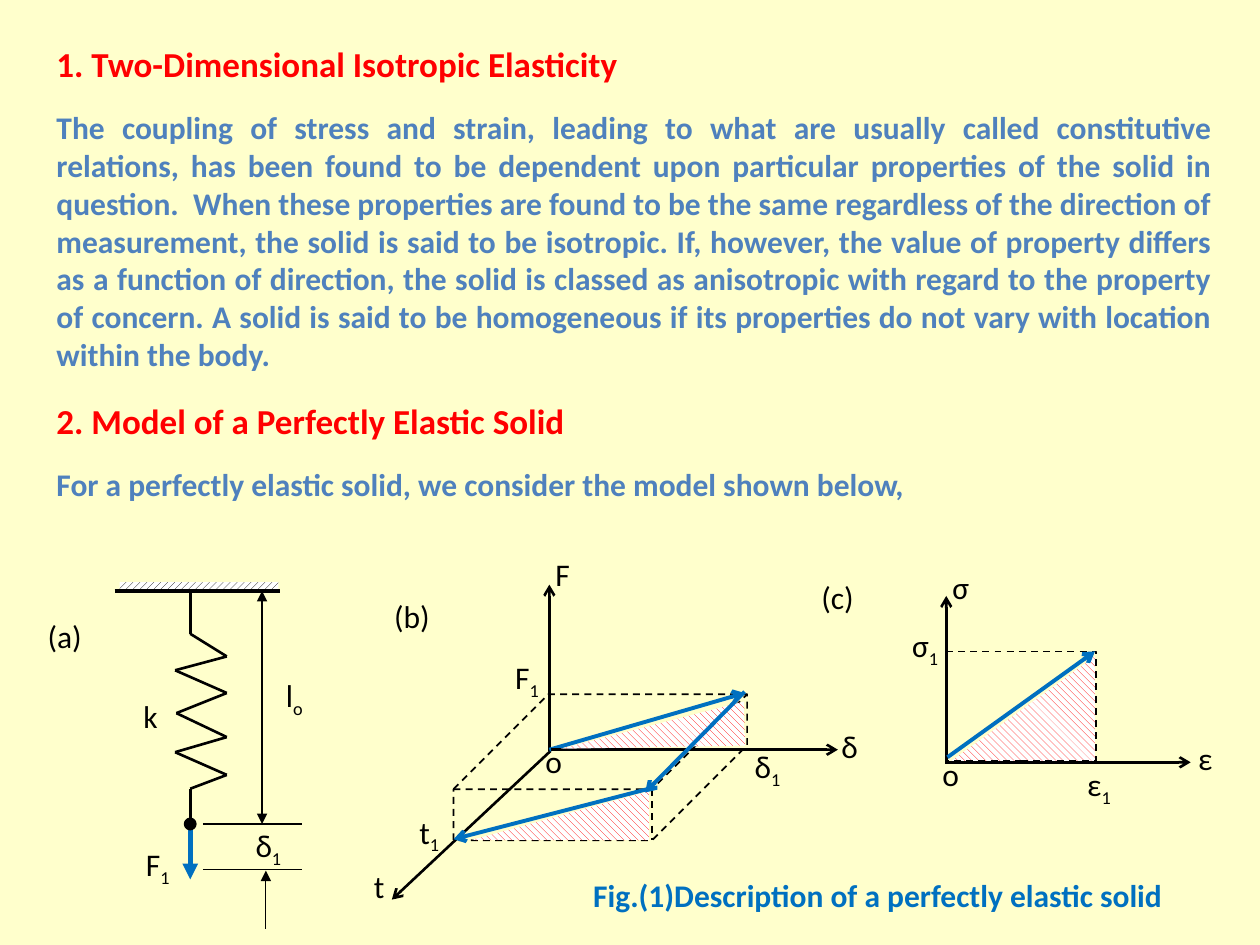
from dataclasses import dataclass
from itertools import pairwise

from pptx import Presentation
from pptx.dml.color import RGBColor
from pptx.enum.dml import MSO_LINE, MSO_PATTERN
from pptx.enum.shapes import MSO_CONNECTOR, MSO_SHAPE
from pptx.enum.text import MSO_AUTO_SIZE, PP_ALIGN
from pptx.oxml.ns import qn
from pptx.util import Inches, Pt
from lxml.etree import SubElement

CREAM = RGBColor(0xFF, 0xFF, 0xCC)
RED = RGBColor(0xFF, 0x00, 0x00)
STEEL = RGBColor(0x4F, 0x81, 0xBD)
BLUE = RGBColor(0x00, 0x70, 0xC0)
BLACK = RGBColor(0x00, 0x00, 0x00)
WHITE = RGBColor(0xFF, 0xFF, 0xFF)

HEADING = {"name": "Calibri", "size": Pt(20), "bold": True}
BODY = {"name": "Calibri", "size": Pt(18), "bold": True}
LABEL = {"name": "Calibri", "size": Pt(18)}


@dataclass
class Line:
    start: tuple[float, float]
    end: tuple[float, float]
    width: float = 1.5
    color: RGBColor = BLACK
    head: str = ""
    tail: str = ""


@dataclass
class Label:
    text: str
    left: float
    top: float
    width: float = 0.39
    height: float = 0.4
    subscript: str = ""


@dataclass
class Hatch:
    left: float
    top: float
    width: float
    height: float
    rotation: float = 0


def force(start: tuple[float, float], end: tuple[float, float]) -> Line:
    return Line(start, end, 2.25, BLUE, tail="arrow")


def axis(tip: tuple[float, float], base: tuple[float, float]) -> Line:
    return Line(tip, base, head="arrow")


def draw_line(slide, line: Line) -> None:
    connector = slide.shapes.add_connector(
        MSO_CONNECTOR.STRAIGHT, *map(Inches, line.start + line.end))
    connector.line.width = Pt(line.width)
    connector.line.color.rgb = line.color
    outline = connector.line._get_or_add_ln()
    for tag, arrow in (("a:headEnd", line.head), ("a:tailEnd", line.tail)):
        if arrow:
            SubElement(outline, qn(tag), type=arrow)
    SubElement(connector._element.spPr, qn("a:effectLst"))


def add_run(paragraph, text: str, color: RGBColor, style: dict):
    run = paragraph.add_run()
    run.text = text
    for name, value in style.items():
        setattr(run.font, name, value)
    run.font.color.rgb = color
    return run


def add_text_frame(slide, left: float, top: float, width: float, height: float):
    frame = slide.shapes.add_textbox(*map(Inches, (left, top, width, height))).text_frame
    frame.word_wrap = True
    frame.auto_size = MSO_AUTO_SIZE.SHAPE_TO_FIT_TEXT
    return frame


def draw_label(slide, label: Label) -> None:
    frame = add_text_frame(slide, label.left, label.top, label.width, label.height)
    paragraph = frame.paragraphs[0]
    add_run(paragraph, label.text, BLACK, LABEL)
    if label.subscript:
        run = add_run(paragraph, label.subscript, BLACK, LABEL)
        run.font._element.set("baseline", "-25000")


def draw_section(slide, top: float, height: float, heading: str, body: str) -> None:
    frame = add_text_frame(slide, 0.35, top, 9.37, height)
    add_run(frame.paragraphs[0], heading, RED, HEADING)
    paragraph = frame.add_paragraph()
    paragraph.alignment = PP_ALIGN.JUSTIFY
    paragraph.space_before = Pt(13.4)
    add_run(paragraph, body, STEEL, BODY)


def add_plain_shape(slide, kind: MSO_SHAPE, left: float, top: float, width: float, height: float):
    """Add a preset shape without shadow, fill or outline."""
    shape = slide.shapes.add_shape(kind, *map(Inches, (left, top, width, height)))
    shape.shadow.inherit = False
    shape.fill.background()
    shape.line.fill.background()
    return shape


def set_pattern(shape, pattern: MSO_PATTERN, color: RGBColor) -> None:
    shape.fill.patterned()
    shape.fill.pattern = pattern
    shape.fill.fore_color.rgb = color
    shape.fill.back_color.rgb = WHITE


def set_dashed(shape) -> None:
    shape.line.color.rgb = BLACK
    shape.line.width = Pt(1)
    shape.line.dash_style = MSO_LINE.DASH


def draw_hatch(slide, hatch: Hatch) -> None:
    triangle = add_plain_shape(slide, MSO_SHAPE.RIGHT_TRIANGLE, hatch.left, hatch.top,
                               hatch.width, hatch.height)
    triangle._element.spPr.xfrm.set("flipH", "1")
    triangle.rotation = hatch.rotation
    set_pattern(triangle, MSO_PATTERN.WIDE_DOWNWARD_DIAGONAL, RED)


def draw_all(slide, items: list) -> None:
    painters = {Line: draw_line, Label: draw_label, Hatch: draw_hatch}
    for item in items:
        painters[type(item)](slide, item)


def draw_spring(slide) -> None:
    draw_line(slide, Line((1.51, 6.49), (1.51, 6.98), 3, BLUE, tail="triangle"))
    ceiling = add_plain_shape(slide, MSO_SHAPE.RECTANGLE, 0.95, 4.62, 1.26, 0.08)
    set_pattern(ceiling, MSO_PATTERN.WIDE_UPWARD_DIAGONAL, BLACK)
    draw_line(slide, Line((0.91, 4.69), (2.22, 4.69), 2.25))
    coil = [(1.51, 4.68), (1.51, 5.03), (1.8, 5.21), (1.39, 5.32), (1.8, 5.5), (1.4, 5.66),
            (1.8, 5.85), (1.39, 5.97), (1.8, 6.15), (1.51, 6.26), (1.51, 6.57)]
    draw_all(slide, [Line(start, end) for start, end in pairwise(coil)])
    joint = add_plain_shape(slide, MSO_SHAPE.OVAL, 1.48, 6.51, 0.06, 0.06)
    joint.fill.solid()
    joint.fill.fore_color.rgb = BLACK
    joint.line.color.rgb = BLACK
    joint.line.width = Pt(3)
    draw_all(slide, [
        *(Line((1.61, y), (2.4, y), 0.75) for y in (6.54, 6.9)),
        Line((2.08, 4.69), (2.08, 6.54), 0.75, head="triangle", tail="triangle"),
        Line((2.11, 6.91), (2.11, 7.37), 0.75, head="triangle"),
        Label("F", 1.06, 6.66, 0.47, subscript="1"),
        Label("k", 1.04, 5.48, 0.47),
        Label("δ", 1.93, 6.51, 0.47, subscript="1"),
        Label("l", 2.17, 5.32, 0.47, subscript="o"),
    ])


def draw_force_history(slide) -> None:
    draw_label(slide, Label("t", 2.87, 6.83, 0.4, 0.29))
    box = add_plain_shape(slide, MSO_SHAPE.CUBE, 3.6, 5.51, 2.33, 1.16)
    box.adjustments[0] = 0.65
    set_dashed(box)
    draw_all(slide, [
        axis((4.36, 4.64), (4.36, 5.96)),
        axis((3.11, 7.14), (4.37, 5.96)),
        force((4.36, 5.95), (5.91, 5.5)),
        force((5.15, 6.26), (3.6, 6.66)),
        Hatch(3.73, 6.28, 1.42, 0.39),
        axis((6.65, 5.95), (4.37, 5.95)),
        Label("δ", 5.89, 5.88, 0.69, 0.38, "1"),
        Label("δ", 6.58, 5.72, height=0.27),
        Label("F", 3.99, 5.17, 0.46, 0.38, "1"),
        Label("F", 4.31, 4.36, height=0.27),
        Label("o", 4.23, 5.84, height=0.27),
        Label("t", 3.23, 6.4, height=0.27, subscript="1"),
        Hatch(4.45, 5.58, 1.46, 0.35, 359),
        force((5.91, 5.49), (5.12, 6.29)),
    ])


def draw_stress_strain(slide) -> None:
    draw_all(slide, [
        axis((7.51, 4.73), (7.51, 6.06)),
        axis((9.45, 6.05), (7.52, 6.05)),
        Label("ε", 8.53, 6.02, 0.69, subscript="1"),
        Label("ε", 9.41, 5.82),
        Label("σ", 7.14, 4.92, 0.46, subscript="1"),
        Label("σ", 7.46, 4.46),
        Label("o", 7.38, 5.94, height=0.27),
        Hatch(7.55, 5.21, 1.14, 0.83),
    ])
    set_dashed(add_plain_shape(slide, MSO_SHAPE.RECTANGLE, 7.52, 5.17, 1.18, 0.87))
    draw_line(slide, force((7.52, 6.01), (8.69, 5.17)))


def main() -> None:
    presentation = Presentation()
    presentation.slide_width, presentation.slide_height = Inches(10), Inches(7.5)
    slide = presentation.slides.add_slide(presentation.slide_layouts[6])
    slide.background.fill.solid()
    slide.background.fill.fore_color.rgb = CREAM
    draw_section(slide, 0.29, 2.74, "1. Two-Dimensional Isotropic Elasticity", (
        "The coupling of stress and strain, leading to what are usually called constitutive "
        "relations, has been found to be dependent upon particular properties of the solid in "
        "question.  When these properties are found to be the same regardless of the direction "
        "of measurement, the solid is said to be isotropic. If, however, the value of property "
        "differs as a function of direction, the solid is classed as anisotropic with regard to "
        "the property of concern. A solid is said to be homogeneous if its properties do not "
        "vary with location within the body."))
    draw_section(slide, 3.12, 0.93, "2. Model of a Perfectly Elastic Solid",
                 "For a perfectly elastic solid, we consider the model shown below,")
    draw_spring(slide)
    draw_force_history(slide)
    draw_stress_strain(slide)
    for text, left, top in (("(a)", 0.28, 4.85), ("(b)", 3.03, 4.69), ("(c)", 6.42, 4.54)):
        draw_label(slide, Label(text, left, top, 0.63))
    caption = add_text_frame(slide, 4.61, 6.9, 4.8, 0.4).paragraphs[0]
    add_run(caption, "Fig.(1)Description of a perfectly elastic solid", BLUE, BODY)
    presentation.save("out.pptx")


if __name__ == "__main__":
    main()
